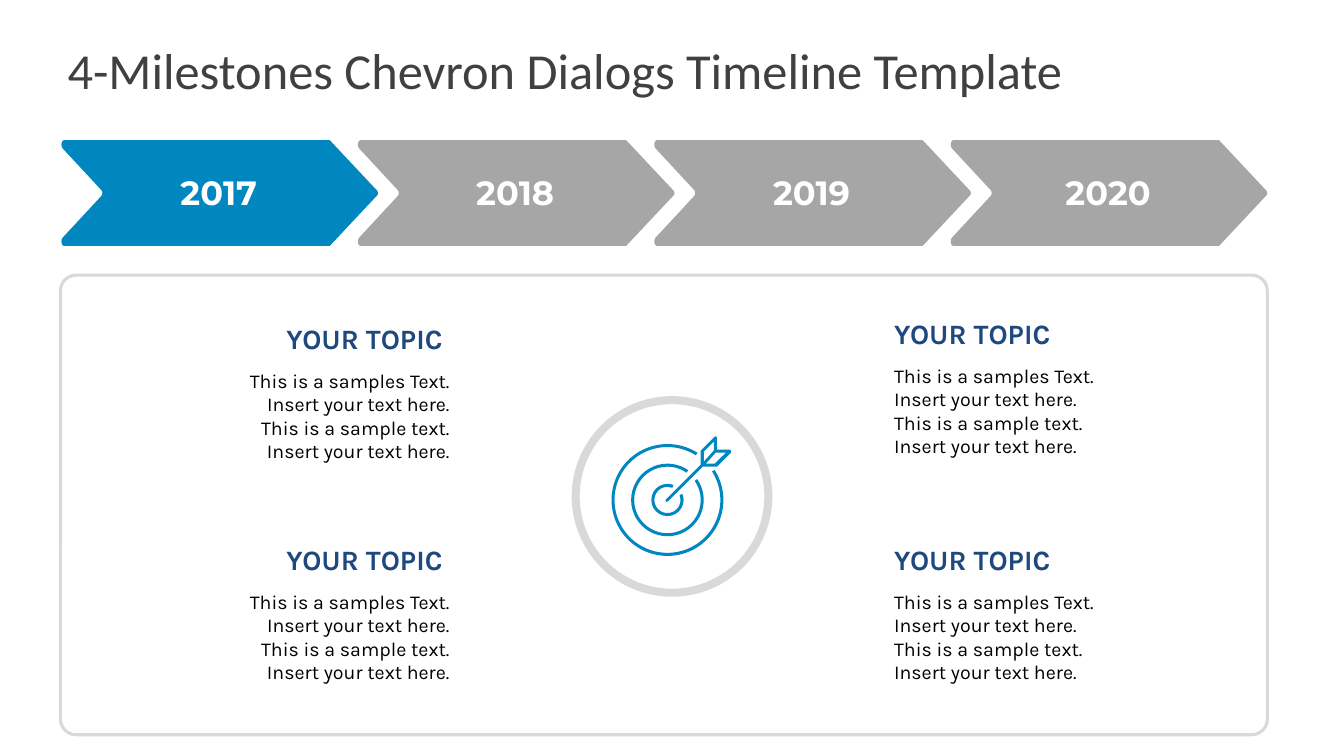
from dataclasses import dataclass

from pptx import Presentation
from pptx.dml.color import RGBColor
from pptx.enum.shapes import MSO_SHAPE
from pptx.enum.text import MSO_ANCHOR, MSO_AUTO_SIZE, PP_ALIGN
from pptx.util import Inches, Pt

LEFT, CENTER, RIGHT = PP_ALIGN.LEFT, PP_ALIGN.CENTER, PP_ALIGN.RIGHT
TOP, MIDDLE, BOTTOM = MSO_ANCHOR.TOP, MSO_ANCHOR.MIDDLE, MSO_ANCHOR.BOTTOM
ROUNDED, DONUT, BLOCK_ARC = MSO_SHAPE.ROUNDED_RECTANGLE, MSO_SHAPE.DONUT, MSO_SHAPE.BLOCK_ARC
FIT_SHAPE, NO_FIT = MSO_AUTO_SIZE.SHAPE_TO_FIT_TEXT, MSO_AUTO_SIZE.NONE

BLUE = RGBColor(0x01, 0x87, 0xC0)
GRAY = RGBColor(0xA6, 0xA6, 0xA6)
LIGHT = RGBColor(0xD9, 0xD9, 0xD9)
NAVY = RGBColor(0x1F, 0x49, 0x7D)
DARK = RGBColor(0x40, 0x40, 0x40)
WHITE = RGBColor(0xFF, 0xFF, 0xFF)
BLACK = RGBColor(0, 0, 0)

Point = tuple[float, float]
Curve = tuple[Point, Point, Point, Point]

BODY = ("This is a samples Text. Insert your text here. "
        "This is a sample text. Insert your text here.")
CHEVRON_HEIGHT = 1.05
CHEVRON_PITCH = 2.94
TARGET_CENTER = (6.62, 4.96)
RING_WIDTH = 0.03


@dataclass(frozen=True)
class Milestone:
    year: str
    color: RGBColor


@dataclass(frozen=True)
class Topic:
    heading_left: float
    body_left: float
    top: float
    align: PP_ALIGN
    right_inset: float = 0.1


@dataclass(frozen=True)
class TargetRing:
    diameter: float
    half_gap: float  # degrees on each side of the arrow


MILESTONES = [Milestone("2017", BLUE), Milestone("2018", GRAY),
              Milestone("2019", GRAY), Milestone("2020", GRAY)]
TOPICS = [Topic(8.77, 8.77, 3.08, LEFT), Topic(8.77, 8.77, 5.32, LEFT),
          Topic(2.64, 2.2, 5.32, RIGHT, 0.17), Topic(2.64, 2.2, 3.13, RIGHT, 0.17)]
TARGET_RINGS = [TargetRing(1.11, 12.5), TargetRing(0.72, 10), TargetRing(0.32, 23)]

CHEVRON_TOP: list[Curve] = [
    ((0.02, 0.08), (0, 0.05), (0.01, 0), (0.04, 0)),
    ((2.66, 0), (2.67, 0), (2.67, 0), (2.68, 0.01)),
]
CHEVRON_TIP: Curve = ((3.13, 0.49), (3.155, 0.51), (3.155, 0.54), (3.13, 0.56))
CHEVRON_NOTCH: Curve = ((0.4, 0.56), (0.42, 0.54), (0.42, 0.51), (0.4, 0.49))

ARROW_OUTLINE: list[Point] = [
    (7.25, 4.47), (7.24, 4.46), (7.11, 4.46), (7.11, 4.34), (7.1, 4.33), (7.09, 4.33),
    (6.95, 4.47), (6.95, 4.61), (6.61, 4.95), (6.6, 4.96), (6.61, 4.98), (6.63, 4.97),
    (6.97, 4.63), (7.1, 4.63), (7.11, 4.63), (7.25, 4.49)]
ARROW_FEATHERS: list[list[Point]] = [
    [(6.98, 4.48), (7.08, 4.38), (7.08, 4.47), (6.98, 4.58)],
    [(7.09, 4.6), (7, 4.6), (7.1, 4.49), (7.2, 4.49)]]


def style(sp, fill: RGBColor | None = None, line: RGBColor | None = None) -> None:
    sp.shadow.inherit = False
    if fill is None:
        sp.fill.background()
    else:
        sp.fill.solid()
        sp.fill.fore_color.rgb = fill
    if line is None:
        sp.line.fill.background()
    else:
        sp.line.color.rgb = line
        sp.line.width = Pt(2.25)


def add_preset(shapes, kind, left: float, top: float, width: float, height: float,
               adjustments: list[float], fill=None, line=None) -> None:
    sp = shapes.add_shape(kind, Inches(left), Inches(top), Inches(width), Inches(height))
    for i, value in enumerate(adjustments):
        sp.adjustments[i] = value
    style(sp, fill, line)


def write(tf, text: str, *, size: float, font: str, color: RGBColor, bold: bool = False,
          align=LEFT, anchor=TOP, wrap: bool = True, fit=FIT_SHAPE) -> None:
    tf.word_wrap = wrap
    tf.auto_size = fit
    tf.vertical_anchor = anchor
    p = tf.paragraphs[0]
    p.alignment = align
    r = p.add_run()
    r.text = text
    r.font.size, r.font.name, r.font.bold = Pt(size), font, bold
    r.font.color.rgb = color


def add_box(shapes, left: float, top: float, width: float, height: float):
    return shapes.add_textbox(Inches(left), Inches(top), Inches(width), Inches(height)).text_frame


def add_outline(shapes, contours: list[list[Point]], fill: RGBColor,
                left: float = 0, top: float = 0) -> None:
    """Draw closed contours as one shape; inner contours become holes."""
    contours = [[(Inches(x), Inches(y)) for x, y in contour] for contour in contours]
    builder = shapes.build_freeform(*contours[0][0])
    builder.add_line_segments(contours[0][1:], close=True)
    for contour in contours[1:]:
        builder.move_to(*contour[0])
        builder.add_line_segments(contour[1:], close=True)
    style(builder.convert_to_shape(Inches(left), Inches(top)), fill)


def sample(curve: Curve, steps: int = 8) -> list[Point]:
    """Return points along a cubic Bezier curve."""
    points = []
    for i in range(steps + 1):
        t = i / steps
        weights = ((1 - t) ** 3, 3 * t * (1 - t) ** 2, 3 * t * t * (1 - t), t ** 3)
        points.append((sum(w * x for w, (x, _) in zip(weights, curve)),
                       sum(w * y for w, (_, y) in zip(weights, curve))))
    return points


def chevron_outline() -> list[Point]:
    upper = [point for curve in CHEVRON_TOP for point in sample(curve)]
    lower = [(x, CHEVRON_HEIGHT - y) for x, y in reversed(upper)]
    return upper + sample(CHEVRON_TIP) + lower + sample(CHEVRON_NOTCH)


def add_target(shapes) -> None:
    group = shapes.add_group_shape().shapes
    cx, cy = TARGET_CENTER
    for ring in TARGET_RINGS:
        d = ring.diameter
        # Angle adjustments count 60,000ths of a degree, scaled by 100,000.
        start, end = ((315 + side * ring.half_gap) * 0.6 for side in (1, -1))
        add_preset(group, BLOCK_ARC, cx - d / 2, cy - d / 2, d, d,
                   [start, end, RING_WIDTH / d], fill=BLUE)
    add_outline(group, [ARROW_OUTLINE, *ARROW_FEATHERS], BLUE)


def add_topic(shapes, topic: Topic) -> None:
    tf = add_box(shapes, topic.heading_left, topic.top, 1.92, 0.44)
    tf.margin_right = Inches(topic.right_inset)
    write(tf, "YOUR TOPIC", size=20, font="Karla", color=NAVY, bold=True,
          align=topic.align, anchor=BOTTOM, wrap=False)
    write(add_box(shapes, topic.body_left, topic.top + 0.48, 2.36, 1.04), BODY,
          size=14, font="Karla", color=BLACK, align=topic.align)


def main() -> None:
    prs = Presentation()
    prs.slide_width, prs.slide_height = Inches(13.33), Inches(7.5)
    s = prs.slides.add_slide(prs.slide_layouts[5])
    shapes = s.shapes

    title = shapes.title
    title.left, title.top, title.width, title.height = map(Inches, (0.67, 0.3, 12, 0.78))
    tf = title.text_frame
    tf.margin_left = tf.margin_right = tf.margin_top = tf.margin_bottom = 0
    write(tf, "4-Milestones Chevron Dialogs Timeline Template", size=36, font="Calibri",
          color=DARK, anchor=MIDDLE, fit=NO_FIT)

    add_preset(shapes, ROUNDED, 0.6, 2.73, 11.97, 4.56, [0.034], line=LIGHT)
    for i, milestone in enumerate(MILESTONES):
        offset = i * CHEVRON_PITCH
        add_outline(shapes, [chevron_outline()], milestone.color, 0.6 + offset, 1.39)
        write(add_box(shapes, 1.62 + offset, 1.66, 1.1, 0.5), milestone.year, size=24,
              font="Montserrat", color=WHITE, bold=True, align=CENTER, anchor=MIDDLE, wrap=False)

    add_preset(shapes, DONUT, 5.67, 3.93, 1.99, 1.99, [0.04], fill=LIGHT)
    add_target(shapes)
    for topic in TOPICS:
        add_topic(shapes, topic)

    prs.save("out.pptx")


if __name__ == "__main__":
    main()
